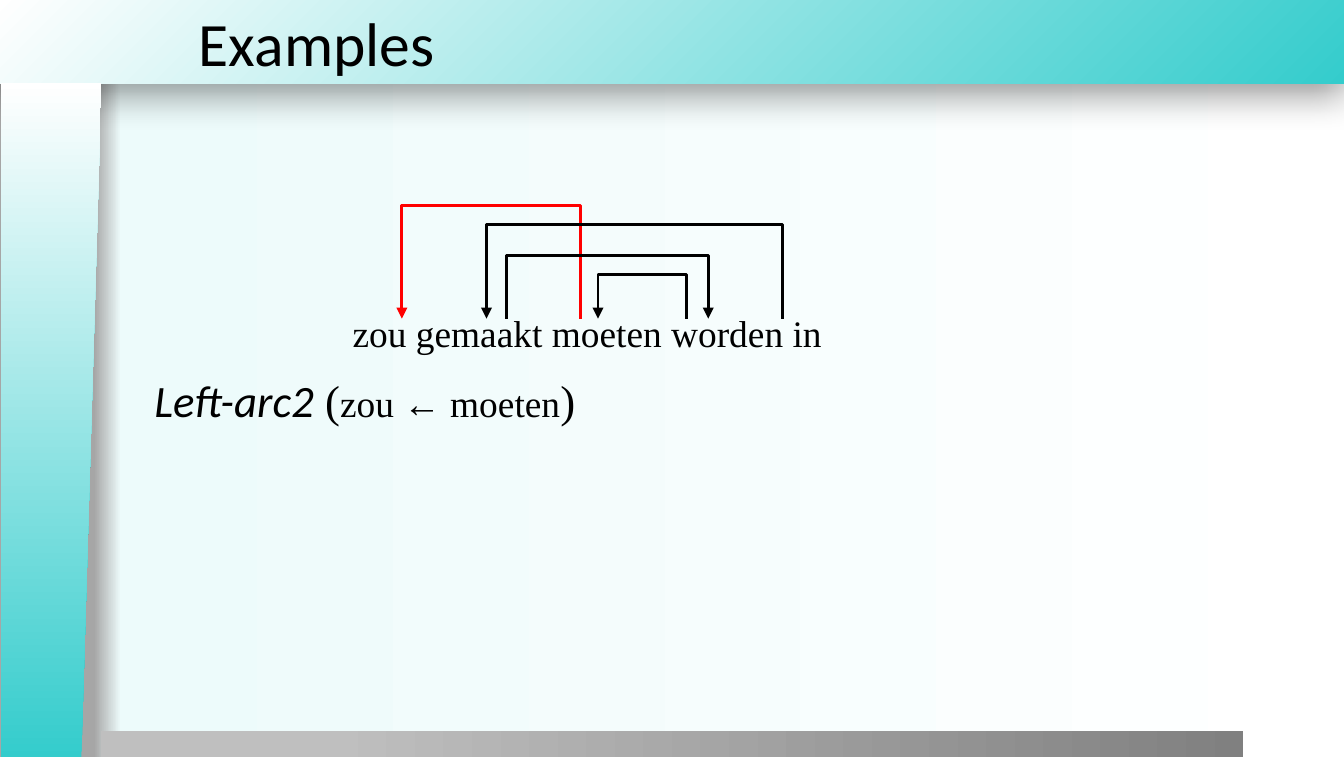
from lxml import etree
from pptx import Presentation
from pptx.dml.color import RGBColor
from pptx.enum.shapes import MSO_SHAPE
from pptx.enum.text import MSO_ANCHOR, MSO_AUTO_SIZE, PP_ALIGN
from pptx.oxml.ns import qn
from pptx.util import Inches, Pt

BLACK = RGBColor(0x00, 0x00, 0x00)
RED = RGBColor(0xFF, 0x00, 0x00)
WHITE = RGBColor(0xFF, 0xFF, 0xFF)
TEAL = RGBColor(0x34, 0xCC, 0xCC)
PALE_TEAL = RGBColor(0xED, 0xFB, 0xFB)
EDGE_GREY = RGBColor(0xA6, 0xA6, 0xA6)
LIGHT_GREY = RGBColor(0xBF, 0xBF, 0xBF)
DARK_GREY = RGBColor(0x80, 0x80, 0x80)
SANS, SERIF = "Calibri", "Times New Roman"


def add_child(parent, tag, **attributes):
    return etree.SubElement(parent, qn(tag), {key: str(value) for key, value in attributes.items()})


def set_gradient(fill, container, stops, corner=False):
    """Fill left to right, or outwards from the bottom right corner."""
    fill.gradient()
    gradient = next(container.iter(qn("a:gradFill")))
    for child in list(gradient):
        gradient.remove(child)
    stop_list = add_child(gradient, "a:gsLst")
    for position, color in stops:
        stop = add_child(stop_list, "a:gs", pos=position * 1000)
        add_child(stop, "a:srgbClr", val=color)
    if corner:
        circle = add_child(gradient, "a:path", path="circle")
        add_child(circle, "a:fillToRect", l=100000, t=100000)
    else:
        add_child(gradient, "a:lin", ang=0, scaled=0)


def add_panel(slide, kind, box, stops, corner=False):
    panel = slide.shapes.add_shape(kind, *map(Inches, box))
    panel.shadow.inherit = False
    panel.line.fill.background()
    set_gradient(panel.fill, panel._element.spPr, stops, corner)
    return panel


def add_frame(slide, width, height):
    """Background, top banner, bottom bar and slanted side panel."""
    set_gradient(slide.background.fill, slide._element,
                 [(7, EDGE_GREY), (9, PALE_TEAL), (100, WHITE)])
    teal_fade = [(0, TEAL), (100, WHITE)]

    banner = add_panel(slide, MSO_SHAPE.RECTANGLE, (-0.01, 0, width + 0.01, 0.62),
                       teal_fade, corner=True)
    effects = banner._element.spPr.find(qn("a:effectLst"))
    shadow = add_child(effects, "a:outerShdw", blurRad=Pt(20), dist=Pt(6),
                       dir=90 * 60000, algn="t", rotWithShape=0)
    add_child(add_child(shadow, "a:srgbClr", val=BLACK), "a:alpha", val=40000)

    add_panel(slide, MSO_SHAPE.RECTANGLE, (0.75, height - 0.19, 8.5, 0.2),
              [(20, LIGHT_GREY), (100, DARK_GREY)])

    side = add_panel(slide, MSO_SHAPE.FLOWCHART_MANUAL_INPUT, (-2.13, 2.75, 5.02, 0.75), teal_fade)
    side.rotation = 270
    side._element.spPr.find(qn("a:xfrm")).set("flipV", "1")


def add_run(paragraph, text, **font_format):
    run = paragraph.add_run()
    run.text = text
    run.font.color.rgb = BLACK
    for name, value in font_format.items():
        setattr(run.font, name, value)


def add_title(slide, box, text):
    title = slide.shapes.title
    title.left, title.top, title.width, title.height = map(Inches, box)
    slide.shapes._spTree.append(title._element)  # bring in front of the banner
    title.text_frame.vertical_anchor = MSO_ANCHOR.MIDDLE
    paragraph = title.text_frame.paragraphs[0]
    paragraph.alignment = PP_ALIGN.LEFT
    add_run(paragraph, text, name=SANS, size=Pt(33))


def add_text_box(slide, box, **frame_format):
    frame = slide.shapes.add_textbox(*map(Inches, box)).text_frame
    frame.word_wrap = True
    for name, value in frame_format.items():
        setattr(frame, name, value)
    return frame.paragraphs[0]


def add_arc(slide, start, end, top, base, color):
    """Square arc from one word to another, with an arrowhead at its end."""
    points = [(start, top), (end, top), (end, base)]
    builder = slide.shapes.build_freeform(Inches(start), Inches(base))
    builder.add_line_segments([(Inches(x), Inches(y)) for x, y in points], close=False)
    arc = builder.convert_to_shape()
    arc.shadow.inherit = False
    arc.fill.background()
    arc.line.color.rgb = color
    arc.line.width = Pt(1.5)
    add_child(arc.line._get_or_add_ln(), "a:tailEnd", type="triangle")


def add_dependency_diagram(slide, box, sentence):
    left, top, width, height = box
    base = top + 0.06
    # start and end from the box's left side, height, color
    arcs = [
        (3.06, 1.73, 0.84, RED),
        (4.56, 2.36, 0.7, BLACK),
        (3.85, 3.19, 0.33, BLACK),
        (2.51, 4.01, 0.47, BLACK),
    ]
    for start, end, rise, color in arcs:
        add_arc(slide, left + start, left + end, base - rise, base, color)

    paragraph = add_text_box(slide, box, margin_left=0, margin_right=0,
                             margin_top=0, margin_bottom=0)
    paragraph.alignment = PP_ALIGN.CENTER
    add_run(paragraph, sentence, name=SERIF, size=Pt(20))


def add_transition(slide, box):
    paragraph = add_text_box(slide, box, auto_size=MSO_AUTO_SIZE.SHAPE_TO_FIT_TEXT)
    add_run(paragraph, "Left-arc2", name=SANS, size=Pt(24), italic=True)
    for text, size, bold in [(" (", 24, False), ("zou ", 20, False), ("← ", 20, True),
                             ("moeten", 20, False), (")", 24, False)]:
        add_run(paragraph, text, name=SERIF, size=Pt(size), bold=bold)


def main():
    width, height = 10, 5.63
    presentation = Presentation()
    presentation.slide_width, presentation.slide_height = Inches(width), Inches(height)
    slide = presentation.slides.add_slide(presentation.slide_layouts[5])
    add_frame(slide, width, height)
    add_title(slide, (1.38, 0, 8.63, 0.62), "Examples")
    add_dependency_diagram(slide, (1.26, 2.31, 6.22, 0.32), "zou gemaakt moeten worden in")
    add_transition(slide, (1.05, 2.72, 5.17, 0.5))
    presentation.save("out.pptx")


if __name__ == "__main__":
    main()
